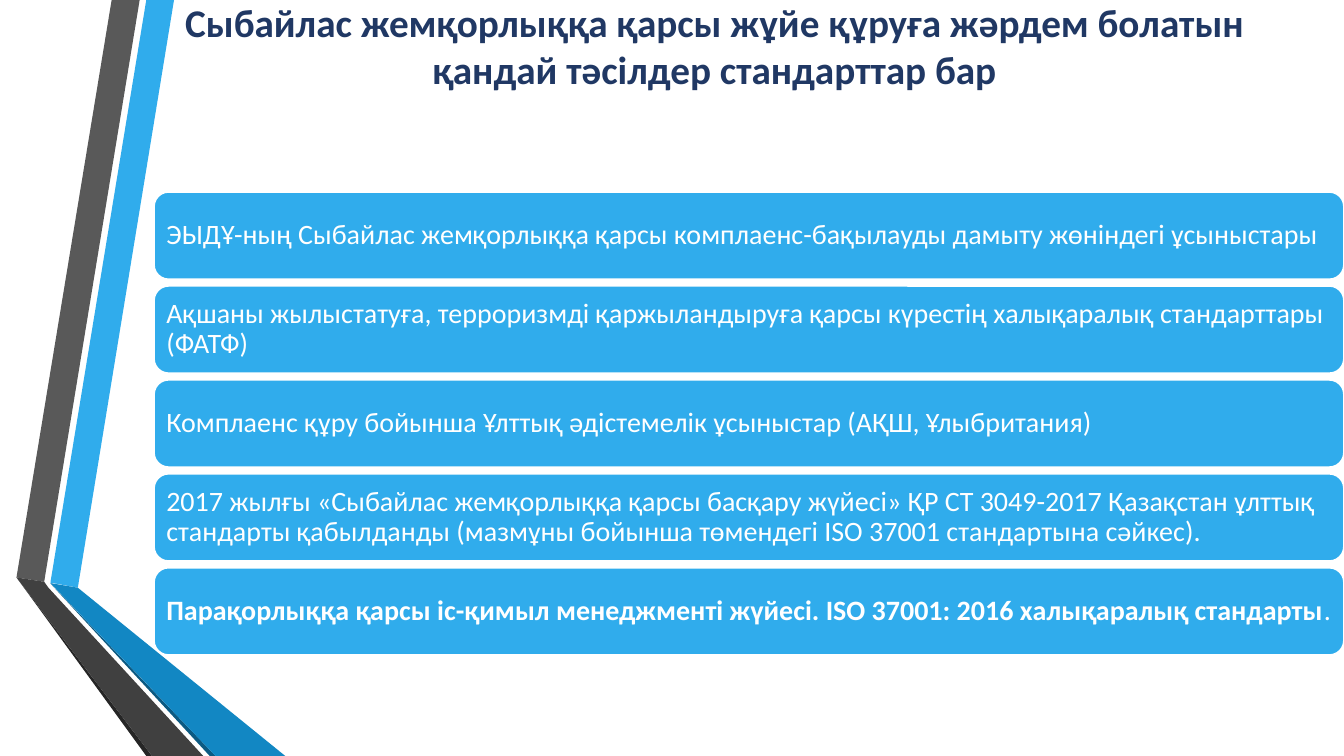
from lxml import etree
from pptx import Presentation
from pptx.dml.color import RGBColor
from pptx.enum import shapes, text
from pptx.util import Pt

SLIDE_SIZE = (960, 540)
TITLE = "Сыбайлас жемқорлыққа қарсы жұйе құруға жәрдем болатын қандай тәсілдер стандарттар бар"
STANDARDS = [
    [("ЭЫДҰ-ның Сыбайлас жемқорлыққа қарсы комплаенс-бақылауды дамыту жөніндегі ұсыныстары", False)],
    [("Ақшаны жылыстатуға, терроризмді қаржыландыруға қарсы күрестің халықаралық стандарттары (ФАТФ)", False)],
    [("Комплаенс құру бойынша Ұлттық әдістемелік ұсыныстар (АҚШ, Ұлыбритания)", False)],
    [("2017 жылғы «Сыбайлас жемқорлыққа қарсы басқару жүйесі» ҚР СТ 3049-2017 Қазақстан ұлттық "
      "стандарты қабылданды (мазмұны бойынша төмендегі ISO 37001 стандартына сәйкес).", False)],
    [("Парақорлыққа қарсы іс-қимыл менеджменті жүйесі. ISO 37001: 2016 халықаралық стандарты", True),
     (".", False)],
]
RIBBONS = [
    ("30ACEC", [(36, 416.2), (55.6, 419.8), (124.3, 0), (104.5, 0)]),
    ("595959", [(99.8, 0), (79.8, 0), (11.8, 412.5), (31.6, 415.6)]),
    ("262626", [(11.8, 412.5), (104.5, 540), (108.6, 540)]),
    ("0C5A82", [(36, 416.8), (149.8, 540), (154, 540)]),
    ("1287C3", [(36, 416.5), (154, 540), (203.8, 540), (55.6, 419.8)]),
    ("404040", [(145.2, 540), (34.6, 419.8), (31.6, 415.6), (11.8, 412.5), (108.6, 540)]),
]
LEFT = 110
TITLE_BOX = (LEFT, 0, 800.5, 65)
BAR_TOP, BAR_PITCH, BAR_WIDTH, BAR_HEIGHT = 137.1, 67.1, 850, 62.4
BAR_INSET = 5.75


def color(value):
    return RGBColor.from_string(value)


def apply(target, values):
    for name, value in values.items():
        setattr(target, name, value)


def paint(shape, fill):
    shape.shadow.inherit = False
    shape.fill.solid()
    shape.fill.fore_color.rgb = color(fill)


def write(shape, runs, size, ink, frame_format, paragraph_format):
    apply(shape.text_frame, {"word_wrap": True, "vertical_anchor": text.MSO_ANCHOR.MIDDLE, **frame_format})
    paragraph = shape.text_frame.paragraphs[0]
    apply(paragraph, paragraph_format)
    for words, bold in runs:
        run = paragraph.add_run()
        run.text = words
        apply(run.font, {"name": "Calibri", "size": Pt(size), "bold": bold})
        run.font.color.rgb = color(ink)


def add_ribbon(slide, fill, points):
    corners = [(Pt(x), Pt(y)) for x, y in points]
    builder = slide.shapes.build_freeform(*corners[0], scale=1.0)
    builder.add_line_segments(corners[1:], close=True)
    ribbon = builder.convert_to_shape()
    paint(ribbon, fill)
    ribbon.line.fill.background()


def add_bar(slide, index, runs):
    box = (LEFT, BAR_TOP + index * BAR_PITCH, BAR_WIDTH, BAR_HEIGHT)
    bar = slide.shapes.add_shape(shapes.MSO_SHAPE.ROUNDED_RECTANGLE, *map(Pt, box))
    paint(bar, "30ACEC")
    bar.line.color.rgb = color("FFFFFF")
    bar.line.width = Pt(1.25)
    insets = {f"margin_{side}": Pt(BAR_INSET) for side in ("left", "top", "right", "bottom")}
    write(bar, runs, 20, "FFFFFF", insets, {"alignment": text.PP_ALIGN.LEFT, "line_spacing": 0.9})


def main():
    presentation = Presentation()
    width, height = SLIDE_SIZE
    apply(presentation, {"slide_width": Pt(width), "slide_height": Pt(height)})
    slide = presentation.slides.add_slide(presentation.slide_layouts[6])
    for fill, points in RIBBONS:
        add_ribbon(slide, fill, points)
    title = slide.shapes.add_textbox(*map(Pt, TITLE_BOX))
    write(title, [(TITLE, True)], 28, "203864", {}, {"alignment": text.PP_ALIGN.CENTER})
    for index, runs in enumerate(STANDARDS):
        add_bar(slide, index, runs)
    presentation.save("out.pptx")


if __name__ == "__main__":
    main()
